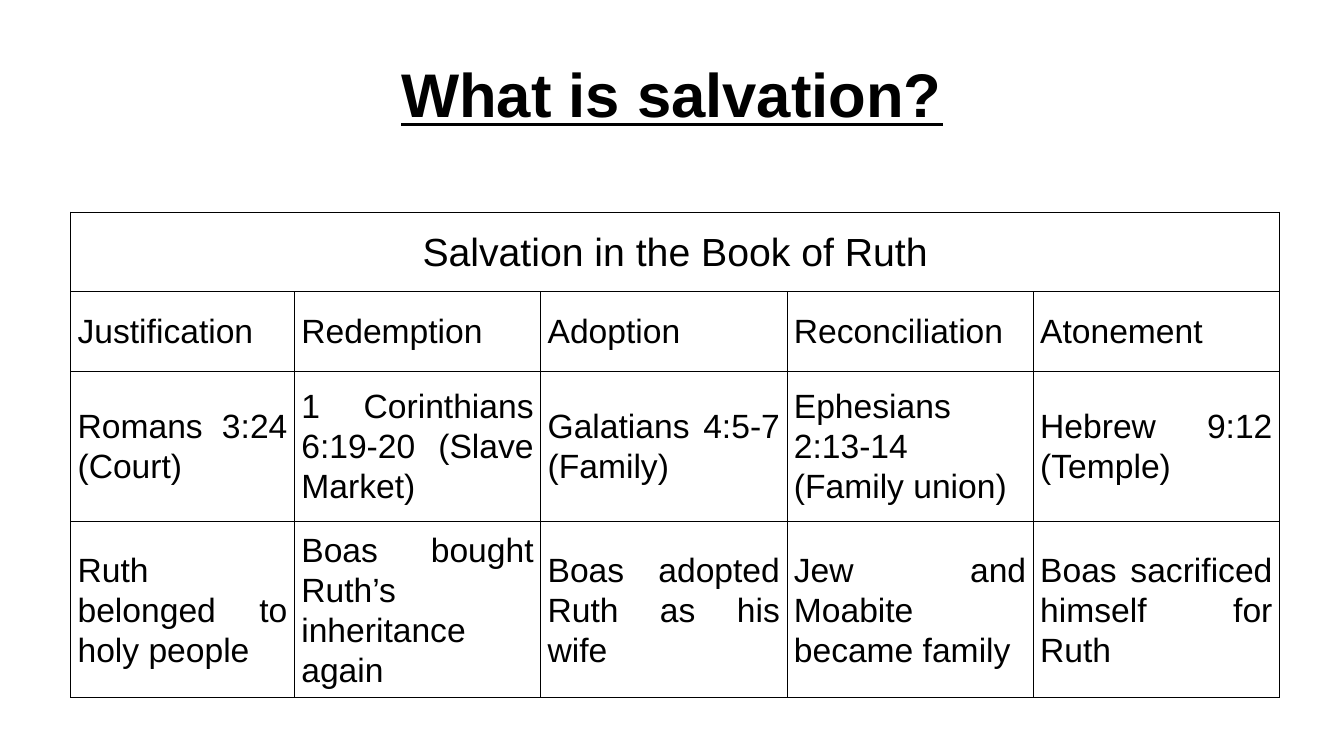
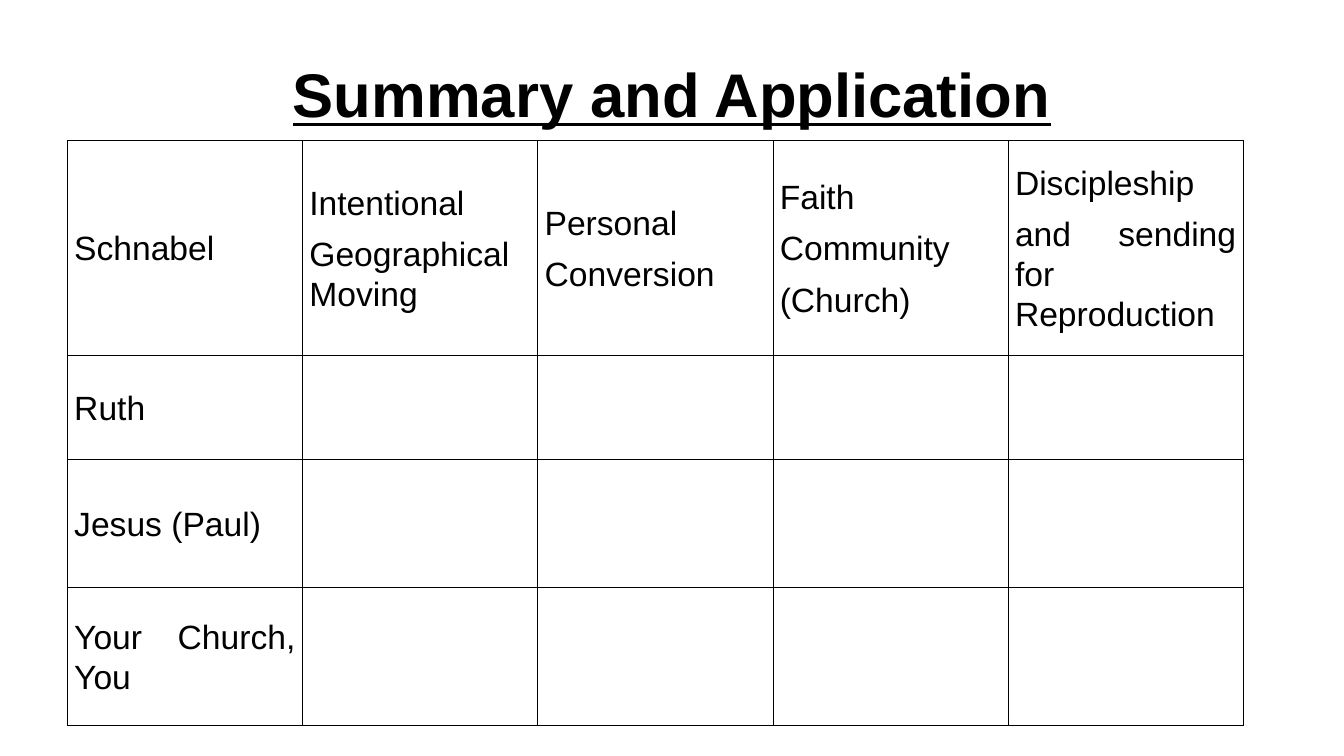
from lxml.etree import SubElement as Sub, Element as Elem
from pptx import Presentation as Deck
from pptx.dml.color import RGBColor as Rgb
from pptx.enum.text import MSO_ANCHOR as Anchor, PP_ALIGN as Align
from pptx.oxml.ns import qn
from pptx.util import Inches, Pt

WIDE, HIGH = 13.33, 7.5
COLS, ROWS = 40, 25
FONT, INK, RULE = "Arial", "000000", 0.28


def tint(code):
    return Rgb.from_string(code)


def across(n):
    return Inches(WIDE * n / COLS)


def down(n):
    return Inches(HIGH * n / ROWS)


def write(frame, text, size=24, bold=False, under=False, align=Align.JUSTIFY,
          lead=1.07, after=8):
    frame.word_wrap = True
    for i, line in enumerate(text.split("\n")):
        para = frame.add_paragraph() if i else frame.paragraphs[0]
        para.alignment, para.line_spacing = align, lead
        para.space_after = Pt(after)
        run = para.add_run()
        run.text = line
        font = run.font
        font.name, font.size, font.bold, font.underline = FONT, Pt(size), bold, under
        font.color.rgb = tint(INK)


class Show:
    """Holds the deck style and the current slide, on a 40 by 25 grid."""

    def __init__(self):
        self.deck = Deck()
        self.deck.slide_width, self.deck.slide_height = Inches(WIDE), Inches(HIGH)

    def page(self, title):
        self.slide = self.deck.slides.add_slide(self.deck.slide_layouts[6])
        box = self.slide.shapes.add_textbox(across(2), down(1), across(36), down(4.17))
        box.text_frame.vertical_anchor = Anchor.MIDDLE
        write(box.text_frame, title, size=44, bold=True, under=True,
              align=Align.CENTER, lead=1, after=0)

    def frame(self, cell):
        cell.fill.background()
        cell.vertical_anchor = Anchor.MIDDLE
        cell.margin_left = cell.margin_right = Inches(0.07)
        cell.margin_top = cell.margin_bottom = Inches(0.02)
        props = cell._tc.get_or_add_tcPr()
        for i, side in enumerate("LRTB"):
            line = Elem(qn("a:ln" + side), w=str(Pt(RULE)))
            Sub(Sub(line, qn("a:solidFill")), qn("a:srgbClr"), val=INK)
            props.insert(i, line)

    def table(self, left, top, cols, rows, data, head=None):
        grid = self.slide.shapes.add_table(
            len(rows), len(cols), across(left), down(top),
            across(sum(cols)), down(sum(rows))).table
        grid.first_row = grid.horz_banding = False
        for col, size in zip(grid.columns, cols):
            col.width = across(size)
        for row, size in zip(grid.rows, rows):
            row.height = down(size)
        for cell in grid.iter_cells():
            self.frame(cell)
        if head:
            first = grid.cell(0, 0)
            first.merge(grid.cell(0, len(cols) - 1))
            write(first.text_frame, head, size=28, align=Align.CENTER)
        for r, line in enumerate(data, 1 if head else 0):
            for c, text in enumerate(line):
                write(grid.cell(r, c).text_frame, text)


def main():
    show = Show()
    show.page("What is salvation?")
    show.table(2.1, 7, [6.66] + [7.33] * 4, [2.63, 2.63, 4.97, 4.97], [
        ["Justification", "Redemption", "Adoption", "Reconciliation", "Atonement"],
        ["Romans 3:24 (Court)", "1 Corinthians 6:19-20 (Slave Market)",
         "Galatians 4:5-7 (Family)", "Ephesians 2:13-14 (Family union)",
         "Hebrew 9:12 (Temple)"],
        ["Ruth belonged to holy people", "Boas bought Ruth’s inheritance again",
         "Boas adopted Ruth as his wife", "Jew and Moabite became family",
         "Boas sacrificed himself for Ruth"],
    ], head="Salvation in the Book of Ruth")

    show.page("Summary and Application")
    show.table(2, 4.63, [7] * 5, [7.13, 3.43, 4.23, 4.57], [
        ["Schnabel", "Intentional\nGeographical Moving", "Personal\nConversion",
         "Faith\nCommunity\n(Church)", "Discipleship\nand sending for Reproduction"],
        ["Ruth"], ["Jesus (Paul)"], ["Your Church, You"],
    ])
    show.deck.save("out.pptx")


if __name__ == "__main__":
    main()
